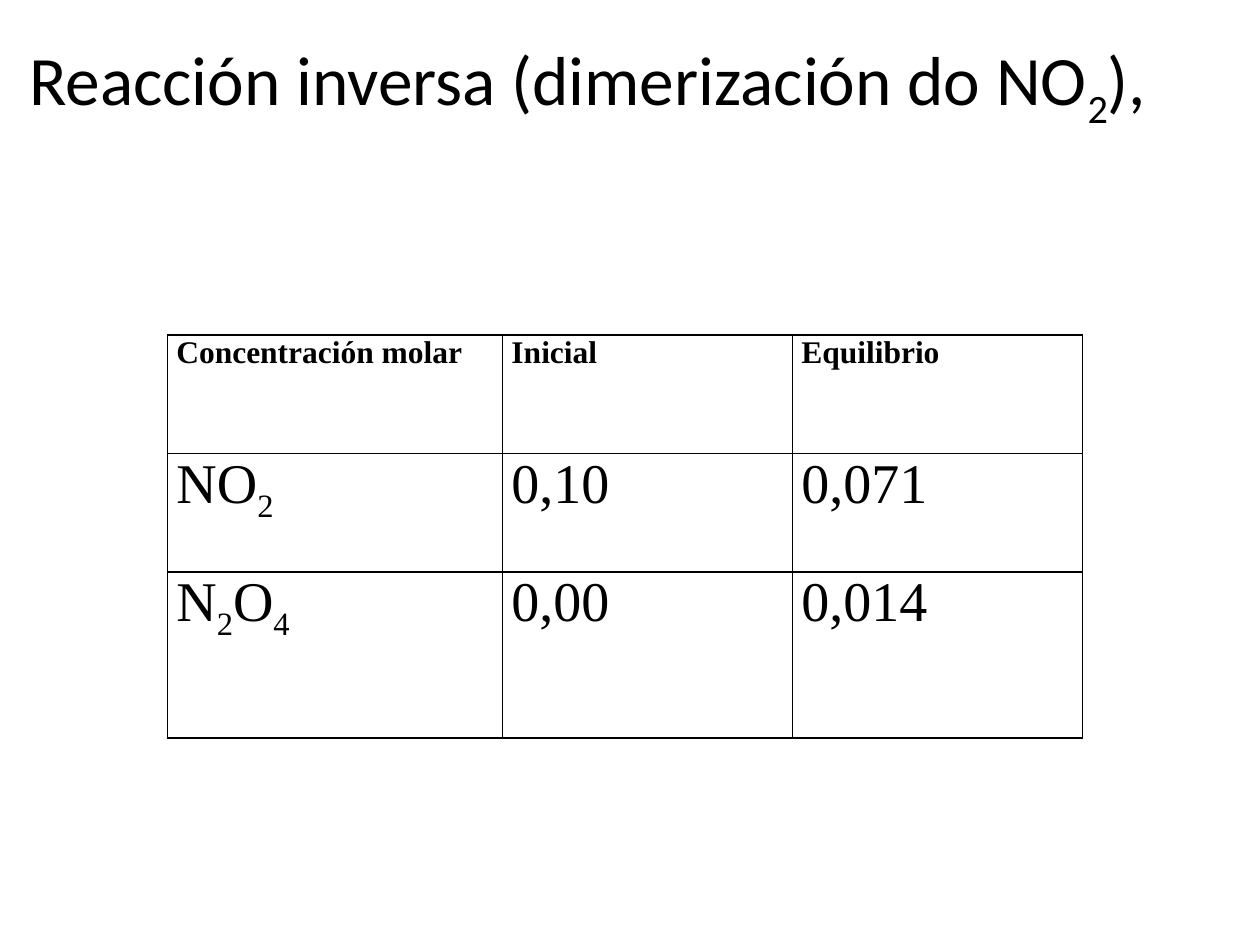
from dataclasses import dataclass

from lxml import etree
from pptx import Presentation
from pptx.dml.color import RGBColor
from pptx.enum.text import MSO_ANCHOR, PP_ALIGN
from pptx.oxml.ns import qn
from pptx.util import Inches, Pt

TITLE_ONLY = 5
CENTER = PP_ALIGN.CENTER
LEFT = PP_ALIGN.LEFT
MIDDLE = MSO_ANCHOR.MIDDLE
TOP = MSO_ANCHOR.TOP


@dataclass(frozen=True)
class Theme:
    ink: str = "000000"
    title_font: str = "Calibri"
    table_font: str = "Times New Roman"
    title_size: float = 39.6
    header_size: float = 18
    body_size: float = 32
    border_width: float = 1


THEME = Theme()
TITLE = "Reacción inversa (dimerización do NO_2),"
CONCENTRATIONS = [
    ["Concentración molar", "Inicial", "Equilibrio"],
    ["NO_2", "0,10", "0,071"],
    ["N_2O_4", "0,00", "0,014"],
]
COLUMN_WIDTHS = [2.66, 2.3, 2.3]
ROW_HEIGHTS = [0.94, 0.94, 1.32]


def add_formula(paragraph, text):
    """Add runs; the character after each underscore becomes a subscript."""
    first, *rest = text.split("_")
    paragraph.add_run().text = first
    for part in rest:
        subscript = paragraph.add_run()
        subscript.text = part[0]
        subscript.font._element.set("baseline", "-25000")
        if part[1:]:
            paragraph.add_run().text = part[1:]


def write_text(text_frame, text, font_name, size, bold, alignment):
    paragraph = text_frame.paragraphs[0]
    paragraph.alignment = alignment
    font = paragraph.font
    font.name = font_name
    font.size = Pt(size)
    font.bold = bold
    font.color.rgb = RGBColor.from_string(THEME.ink)
    add_formula(paragraph, text)


def set_borders(cell):
    properties = cell._tc.get_or_add_tcPr()
    for position, side in enumerate(("lnL", "lnR", "lnT", "lnB")):
        line = etree.Element(qn(f"a:{side}"), w=str(Pt(THEME.border_width)))
        fill = etree.SubElement(line, qn("a:solidFill"))
        etree.SubElement(fill, qn("a:srgbClr"), val=THEME.ink)
        properties.insert(position, line)


def add_title(slide):
    title = slide.shapes.title
    title.left, title.top = Inches(0), Inches(0.25)
    title.width, title.height = Inches(9.33), Inches(0.83)
    title.text_frame.vertical_anchor = MIDDLE
    write_text(title.text_frame, TITLE, THEME.title_font, THEME.title_size,
               False, CENTER)


def format_cell(cell, text, is_header):
    cell.fill.background()
    cell.margin_left = cell.margin_right = Inches(0.07)
    cell.margin_top = cell.margin_bottom = 0
    cell.vertical_anchor = TOP
    size = THEME.header_size if is_header else THEME.body_size
    write_text(cell.text_frame, text, THEME.table_font, size, is_header, LEFT)
    set_borders(cell)


def add_concentration_table(slide):
    table = slide.shapes.add_table(
        len(ROW_HEIGHTS), len(COLUMN_WIDTHS), Inches(1.33), Inches(2.66),
        Inches(sum(COLUMN_WIDTHS)), Inches(sum(ROW_HEIGHTS))).table
    table.first_row = False
    table.horz_banding = False
    for column, width in zip(table.columns, COLUMN_WIDTHS):
        column.width = Inches(width)
    for row_index, (row, height) in enumerate(zip(table.rows, ROW_HEIGHTS)):
        row.height = Inches(height)
        for cell, text in zip(row.cells, CONCENTRATIONS[row_index]):
            format_cell(cell, text, is_header=row_index == 0)


def main():
    presentation = Presentation()
    presentation.slide_width = Inches(10)
    presentation.slide_height = Inches(7.5)
    slide = presentation.slides.add_slide(presentation.slide_layouts[TITLE_ONLY])
    add_title(slide)
    add_concentration_table(slide)
    presentation.save("out.pptx")


if __name__ == "__main__":
    main()
